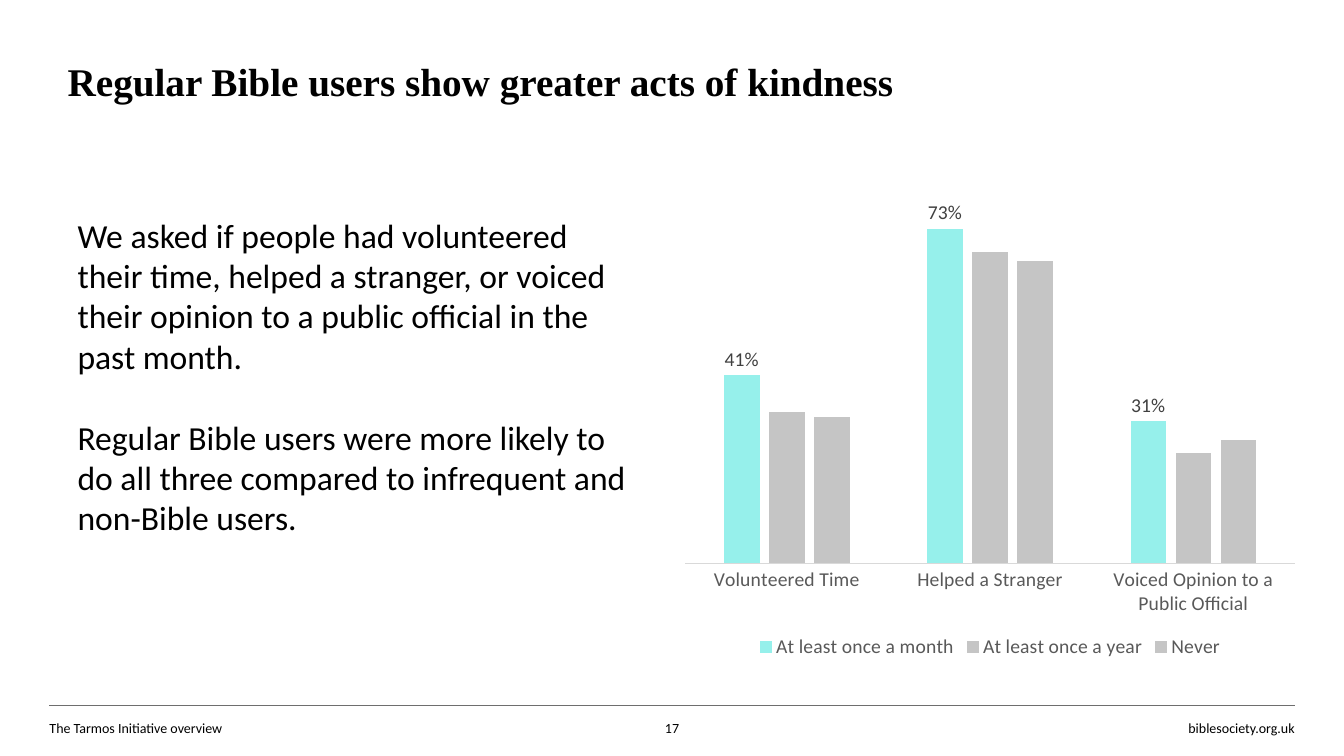
"""Build the slide on Bible use and acts of kindness."""
from lxml.etree import SubElement
from pptx import Presentation
from pptx.chart.data import CategoryChartData
from pptx.dml.color import RGBColor
from pptx.enum.chart import XL_CHART_TYPE, XL_LABEL_POSITION, XL_LEGEND_POSITION, XL_TICK_MARK
from pptx.enum.shapes import MSO_CONNECTOR
from pptx.enum.text import MSO_ANCHOR, PP_ALIGN
from pptx.oxml import parse_xml
from pptx.oxml.ns import nsdecls, qn
from pptx.util import Inches, Pt

WIDE, HIGH = Inches(13.33), Inches(7.5)
HUES = {"ink": "000000", "rule": "6E6E6E", "axis": "D9D9D9", "grey": "595959",
        "label": "404040", "aqua": "96F0EB", "pale": "C5C5C5"}

TITLE = "Regular Bible users show greater acts of kindness"
BODY = [
    "We asked if people had volunteered their time, helped a stranger, "
    "or voiced their opinion to a public official in the past month.",
    "Regular Bible users were more likely to do all three compared to "
    "infrequent and non-Bible users.",
]
GROUPS = ["Volunteered Time", "Helped a Stranger", "Voiced Opinion to a Public Official"]
SERIES = [
    ("At least once a month", (0.41, 0.73, 0.31), "aqua"),
    ("At least once a year", (0.33, 0.68, 0.24), "pale"),
    ("Never", (0.32, 0.66, 0.27), "pale"),
]
FOOT = [
    ("The Tarmos Initiative overview", 3.68, 33.76, PP_ALIGN.LEFT),
    ("17", 48.39, 3.23, PP_ALIGN.CENTER),
    ("biblesociety.org.uk", 88.22, 8.1, PP_ALIGN.RIGHT),
]
PLOT = {"x": 0.02, "y": 0.02, "w": 0.96, "h": 0.77}


def place(left, top, width, height):
    """Turn percentages of the slide into lengths."""
    return [int(part * side / 100) for part, side in
            zip((left, top, width, height), (WIDE, HIGH, WIDE, HIGH))]


def tint(hue):
    """Look up a colour."""
    return RGBColor.from_string(HUES[hue])


def style(font, size, hue="ink", face="Calibri", bold=False):
    """Set the look of a font."""
    font.size, font.name, font.bold = Pt(size), face, bold
    font.color.rgb = tint(hue)


def write(slide, text, box, size=10, face="Calibri", bold=False, align=PP_ALIGN.LEFT,
          anchor=MSO_ANCHOR.MIDDLE, inset=(0, 0), gap=0, wrap=True):
    """Add a text box with one paragraph for each line."""
    frame = slide.shapes.add_textbox(*place(*box)).text_frame
    frame.word_wrap, frame.vertical_anchor = wrap, anchor
    frame.margin_left = frame.margin_right = Inches(inset[0])
    frame.margin_top = frame.margin_bottom = Inches(inset[1])
    for num, line in enumerate(text):
        para = frame.add_paragraph() if num else frame.paragraphs[0]
        para.alignment = align
        if num:
            para.space_before = Pt(gap)
        run = para.add_run()
        run.text = line
        style(run.font, size, face=face, bold=bold)


def draw(slide, box):
    """Add the column chart."""
    data = CategoryChartData(number_format="0%")
    data.categories = GROUPS
    for name, vals, _ in SERIES:
        data.add_series(name, vals)
    chart = slide.shapes.add_chart(XL_CHART_TYPE.COLUMN_CLUSTERED, *place(*box), data).chart
    style(chart.font, 10)
    chart.has_title = False
    chart.has_legend = True
    chart.legend.position = XL_LEGEND_POSITION.BOTTOM
    chart.legend.include_in_layout = False
    style(chart.legend.font, 14, "grey")

    cats, vals = chart.category_axis, chart.value_axis
    cats.major_tick_mark = cats.minor_tick_mark = XL_TICK_MARK.NONE
    style(cats.tick_labels.font, 14, "grey")
    cats.format.line.color.rgb = tint("axis")
    cats.format.line.width = Pt(0.75)
    vals.minimum_scale, vals.maximum_scale = 0, 0.8
    vals.has_major_gridlines = vals.visible = False

    plot = chart.plots[0]
    plot.gap_width, plot.overlap, plot.vary_by_categories = 219, -27, False
    for bars, (_, _, hue) in zip(plot.series, SERIES):
        bars.format.fill.solid()
        bars.format.fill.fore_color.rgb = tint(hue)
    tags = plot.series[0].data_labels
    tags.show_value = True
    tags.position = XL_LABEL_POSITION.OUTSIDE_END
    tags.number_format, tags.number_format_is_linked = "0%", False
    style(tags.font, 14, "label")

    area = chart.element.find(".//" + qn("c:plotArea"))
    for old in area.findall(qn("c:layout")):
        area.remove(old)
    parts = "".join(f'<c:{key}Mode val="edge"/>' for key in "xy")
    parts += "".join(f'<c:{key} val="{val}"/>' for key, val in PLOT.items())
    area.insert(0, parse_xml(
        f'<c:layout {nsdecls("c")}><c:manualLayout><c:layoutTarget val="inner"/>'
        f'{parts}</c:manualLayout></c:layout>'))


def main():
    """Put the slide together and save it."""
    deck = Presentation()
    deck.slide_width, deck.slide_height = WIDE, HIGH
    slide = deck.slides.add_slide(deck.slide_layouts[6])

    left, top, width, _ = place(3.68, 93.33, 92.64, 0)
    rule = slide.shapes.add_connector(MSO_CONNECTOR.STRAIGHT, left, top, left + width, top)
    rule.line.color.rgb, rule.line.width = tint("rule"), Pt(0.5)
    SubElement(rule.element.spPr, qn("a:effectLst"))

    write(slide, [TITLE], (5.03, 7.6, 79.74, 6.27), size=28, face="Times New Roman", bold=True)
    for text, x, span, align in FOOT:
        write(slide, [text], (x, 95.2, span, 2.27), align=align, wrap=align != PP_ALIGN.RIGHT)
    draw(slide, (50.04, 24.8, 47.26, 62.93))
    write(slide, BODY, (5.03, 27.73, 42.84, 44.4), size=24, anchor=MSO_ANCHOR.TOP,
          inset=(0.1, 0.05), gap=29)
    deck.save("out.pptx")


if __name__ == "__main__":
    main()
